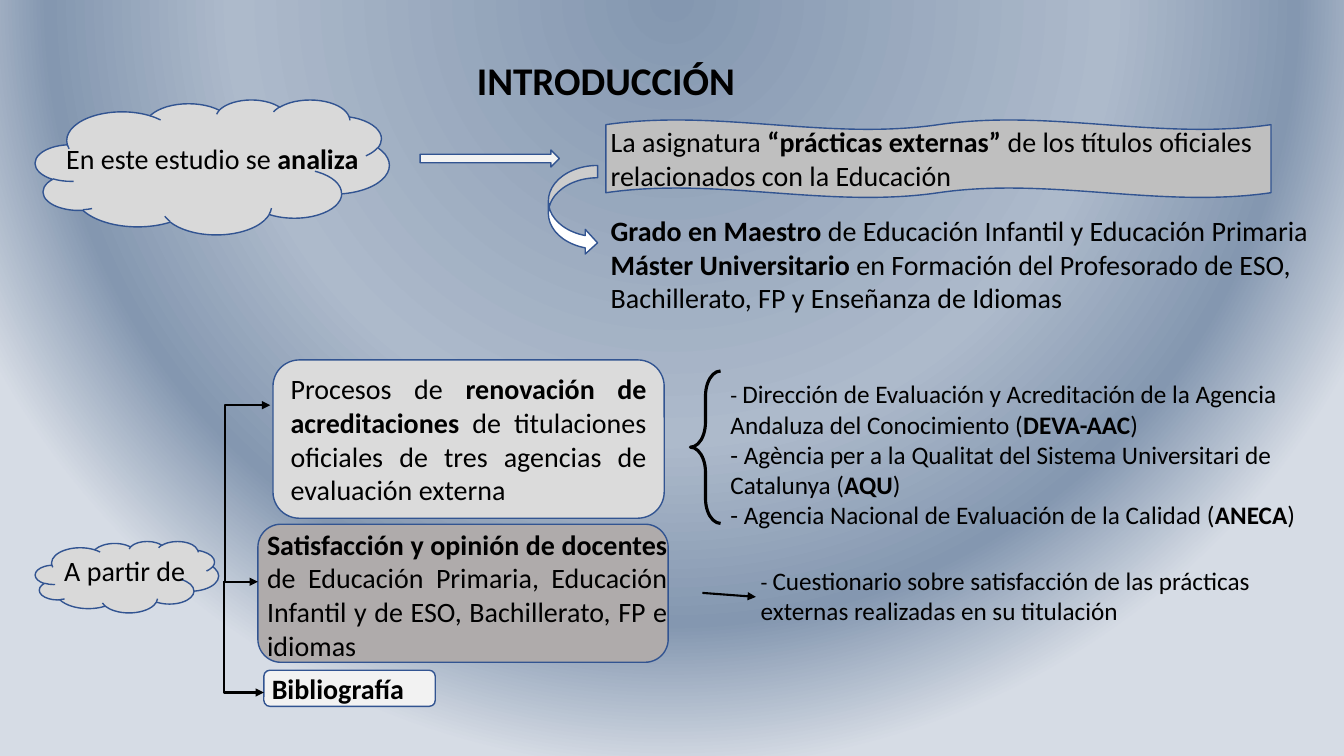
from lxml.etree import SubElement
from pptx import Presentation
from pptx.dml.color import RGBColor
from pptx.enum.shapes import MSO_CONNECTOR, MSO_SHAPE
from pptx.enum.text import MSO_ANCHOR, MSO_AUTO_SIZE, PP_ALIGN
from pptx.oxml import parse_xml
from pptx.oxml.ns import nsdecls, qn
from pptx.util import Cm, Pt

FONT = "Calibri"
COLORS = {
    "black": "000000", "white": "FFFFFF", "outline": "325491",
    "cloud": "D9D9D9", "light": "F2F2F2", "process": "DBDBDB",
    "opinion": "AFABAB", "wave": "BFBFBF",
    "slate": "8497B0", "mist": "ADBACB", "pale": "D6DCE5",
}
GRADIENT = [(0, "slate"), (57, "mist"), (81, "slate"), (100, "pale")]
TITLE = ("INTRODUCCIÓN", (10.8, 0.53, 8.94, 2.97))
PROCESS_BOX = (6.88, 9.07, 9.86, 3.99)

SHAPES = [
    (MSO_SHAPE.CLOUD, (0.89, 13.64, 4.62, 1.8), "cloud"),
    (MSO_SHAPE.ROUNDED_RECTANGLE, (6.65, 16.89, 4.32, 0.91), "light"),
    (MSO_SHAPE.ROUNDED_RECTANGLE, (6.5, 13.21, 10.34, 3.48), "opinion"),
    (MSO_SHAPE.DOUBLE_WAVE, (15.27, 3.02, 16.76, 1.96), "wave"),
    (MSO_SHAPE.CLOUD, (0.89, 2.51, 8.92, 3.4), "cloud"),
    (MSO_SHAPE.RIGHT_ARROW, (10.59, 3.78, 3.51, 0.43), "light"),
    (MSO_SHAPE.CURVED_RIGHT_ARROW, (13.82, 4.17, 1.24, 2.26), "white"),
]
BRACE_BOX = (17.4, 9.35, 0.76, 3.84)

PROCESS = [[("Procesos de ", 20, False), ("renovación de acreditaciones", 20, True),
            (" de titulaciones oficiales de tres agencias de evaluación externa", 20, False)]]
TEXTS = [
    ((1.42, 3.45, 8.08, 1.12), PP_ALIGN.LEFT,
     [[("En este estudio se ", 20, False), ("analiza", 20, True)]]),
    ((15.14, 3.02, 17.55, 1.96), PP_ALIGN.LEFT,
     [[("La asignatura ", 20, False), ("“prácticas externas” ", 20, True),
       ("de los títulos oficiales relacionados con la Educación", 20, False)]]),
    ((15.14, 5.26, 18.08, 3.68), PP_ALIGN.LEFT,
     [[("Grado en Maestro ", 20, True),
       ("de Educación Infantil y Educación Primaria", 20, False)],
      [("Máster Universitario ", 20, True),
       ("en Formación del Profesorado de ESO, Bachillerato, FP y Enseñanza de Idiomas", 20, False)]]),
    ((1.37, 13.82, 3.58, 1.12), PP_ALIGN.LEFT, [[("A partir de", 20, False)]]),
    ((18.16, 9.42, 15.29, 4.11), PP_ALIGN.LEFT,
     [[("- ", 16, False),
       ("Dirección de Evaluación y Acreditación de la Agencia Andaluza del Conocimiento (", 18, False),
       ("DEVA-AAC", 18, True), (")", 18, False)],
      [("- Agència per a la Qualitat del Sistema Universitari de Catalunya (", 18, False),
       ("AQU", 18, True), (")", 18, False)],
      [("- Agencia Nacional de Evaluación de la Calidad (", 18, False),
       ("ANECA", 18, True), (")", 18, False)]]),
    ((6.48, 13.16, 10.59, 3.68), PP_ALIGN.JUSTIFY,
     [[("Satisfacción y opinión de docentes ", 20, True),
       ("de Educación Primaria, Educación Infantil y de ESO, Bachillerato, FP e idiomas", 20, False)]]),
    ((18.92, 14.12, 13.39, 1.8), PP_ALIGN.LEFT,
     [[("- ", 16, False),
       ("Cuestionario sobre satisfacción de las prácticas externas realizadas en su titulación", 18, False)]]),
    ((6.6, 16.79, 4.45, 1.12), PP_ALIGN.LEFT, [[("Bibliografía", 20, True)]]),
]
BRANCHES = [
    ((5.64, 14.63), (6.65, 17.45)),
    ((5.66, 14.66), (6.81, 10.21)),
    ((5.66, 13.79), (6.5, 14.66)),
]
SURVEY_ARROW = ((17.7, 14.94), (19.05, 15.04))


def color(name):
    return RGBColor.from_string(COLORS[name])


def lengths(values):
    return [Cm(value) for value in values]


def write(text_frame, paragraphs, alignment):
    text_frame.word_wrap = True
    for index, runs in enumerate(paragraphs):
        paragraph = text_frame.add_paragraph() if index else text_frame.paragraphs[0]
        paragraph.alignment = alignment
        for text, size, bold in runs:
            run = paragraph.add_run()
            run.text = text
            run.font.name = FONT
            run.font.size = Pt(size)
            run.font.bold = bold
            run.font.color.rgb = color("black")


def add_filled(slide, kind, box, fill):
    shape = slide.shapes.add_shape(kind, *lengths(box))
    shape.shadow.inherit = False
    shape.fill.solid()
    shape.fill.fore_color.rgb = color(fill)
    shape.line.color.rgb = color("outline")
    shape.line.width = Pt(1)
    return shape


def add_arrow(slide, kind, begin, end):
    connector = slide.shapes.add_connector(kind, *lengths(begin + end))
    connector.line.color.rgb = color("black")
    connector.line.width = Pt(1.5)
    SubElement(connector.line._get_or_add_ln(), qn("a:tailEnd"), type="triangle")
    SubElement(connector.element.spPr, qn("a:effectLst"))
    return connector


def add_branch(slide, begin, end):
    (x1, y1), (x2, y2) = begin, end
    middle_x, middle_y = (x1 + x2) / 2, (y1 + y2) / 2
    half_run, half_rise = (x2 - x1) / 2, (y2 - y1) / 2
    connector = add_arrow(slide, MSO_CONNECTOR.ELBOW,
                          (middle_x + half_rise, middle_y - half_run),
                          (middle_x - half_rise, middle_y + half_run))
    properties = connector.element.spPr
    properties.find(qn("a:xfrm")).set("rot", str(270 * 60000))
    properties.find(qn("a:prstGeom")).set("prst", "bentConnector2")


def set_background(slide):
    slide.background.fill.solid()
    solid = next(slide.element.iter(qn("p:bgPr"))).find(qn("a:solidFill"))
    stops = "".join(
        f'<a:gs pos="{position * 1000}"><a:srgbClr val="{COLORS[name]}"/></a:gs>'
        for position, name in GRADIENT)
    gradient = parse_xml(
        f'<a:gradFill {nsdecls("a")} rotWithShape="1"><a:gsLst>{stops}</a:gsLst>'
        '<a:path path="circle"><a:fillToRect l="50000" t="-80000" r="50000" b="180000"/>'
        '</a:path></a:gradFill>')
    solid.getparent().replace(solid, gradient)


def main():
    presentation = Presentation()
    presentation.slide_width, presentation.slide_height = Cm(33.87), Cm(19.05)
    slide = presentation.slides.add_slide(presentation.slide_layouts[5])
    set_background(slide)

    title = slide.shapes.title
    title_text, title_box = TITLE
    title.left, title.top, title.width, title.height = lengths(title_box)
    title.text_frame.vertical_anchor = MSO_ANCHOR.MIDDLE
    write(title.text_frame, [[(title_text, 28, True)]], PP_ALIGN.CENTER)

    for kind, box, fill in SHAPES:
        add_filled(slide, kind, box, fill)
    process = add_filled(slide, MSO_SHAPE.ROUNDED_RECTANGLE, PROCESS_BOX, "process")
    process.text_frame.vertical_anchor = MSO_ANCHOR.MIDDLE
    write(process.text_frame, PROCESS, PP_ALIGN.JUSTIFY)

    for box, alignment, paragraphs in TEXTS:
        text_frame = slide.shapes.add_textbox(*lengths(box)).text_frame
        write(text_frame, paragraphs, alignment)
        text_frame.auto_size = MSO_AUTO_SIZE.SHAPE_TO_FIT_TEXT

    brace = slide.shapes.add_shape(MSO_SHAPE.LEFT_BRACE, *lengths(BRACE_BOX))
    brace.shadow.inherit = False
    brace.adjustments[0] = 0.83
    brace.fill.background()
    brace.line.color.rgb = color("black")
    brace.line.width = Pt(2.25)

    for begin, end in BRANCHES:
        add_branch(slide, begin, end)
    add_arrow(slide, MSO_CONNECTOR.STRAIGHT, *SURVEY_ARROW)
    presentation.save("out.pptx")


if __name__ == "__main__":
    main()
